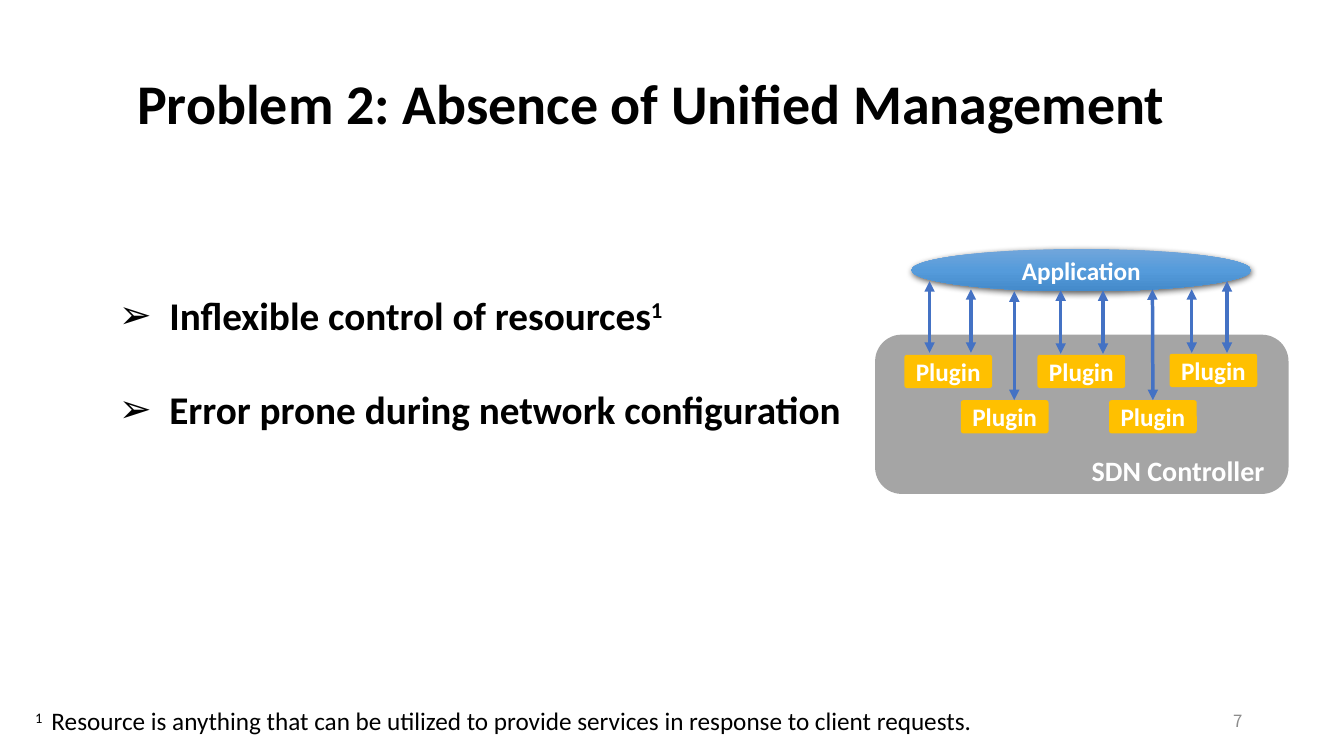
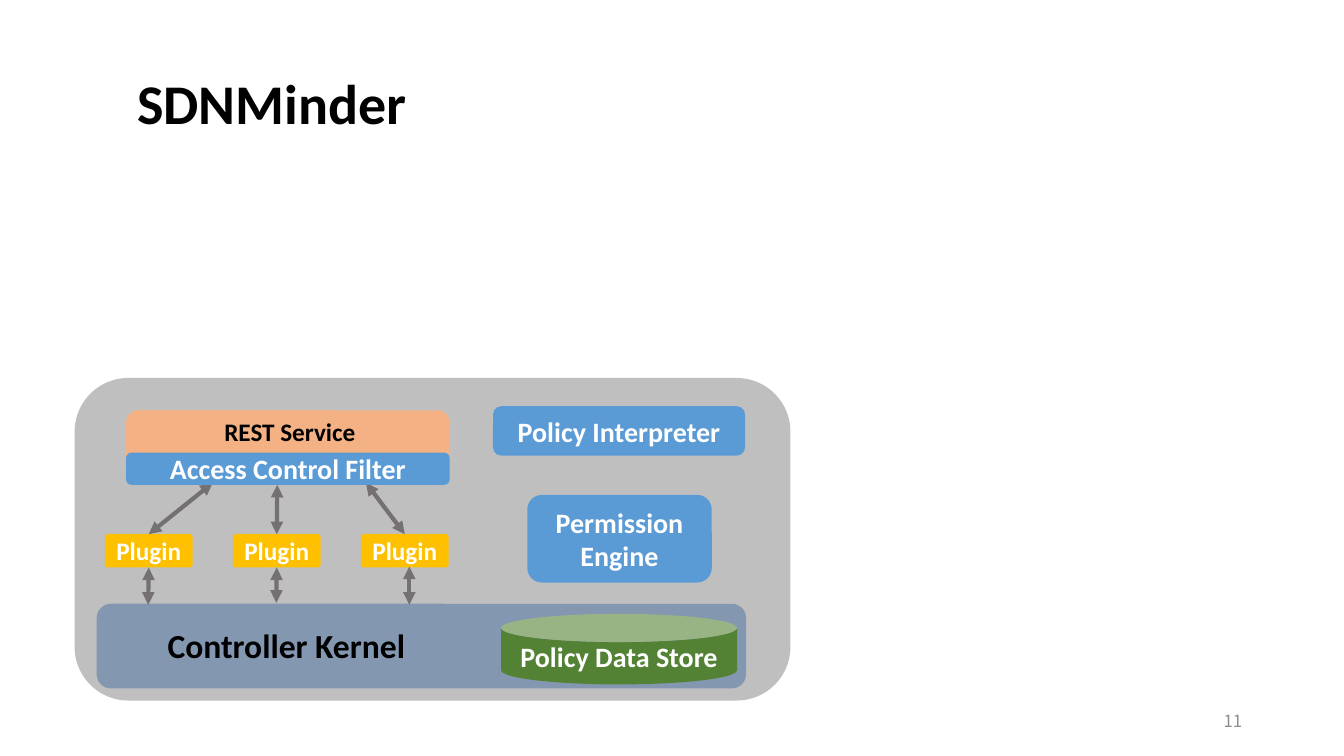
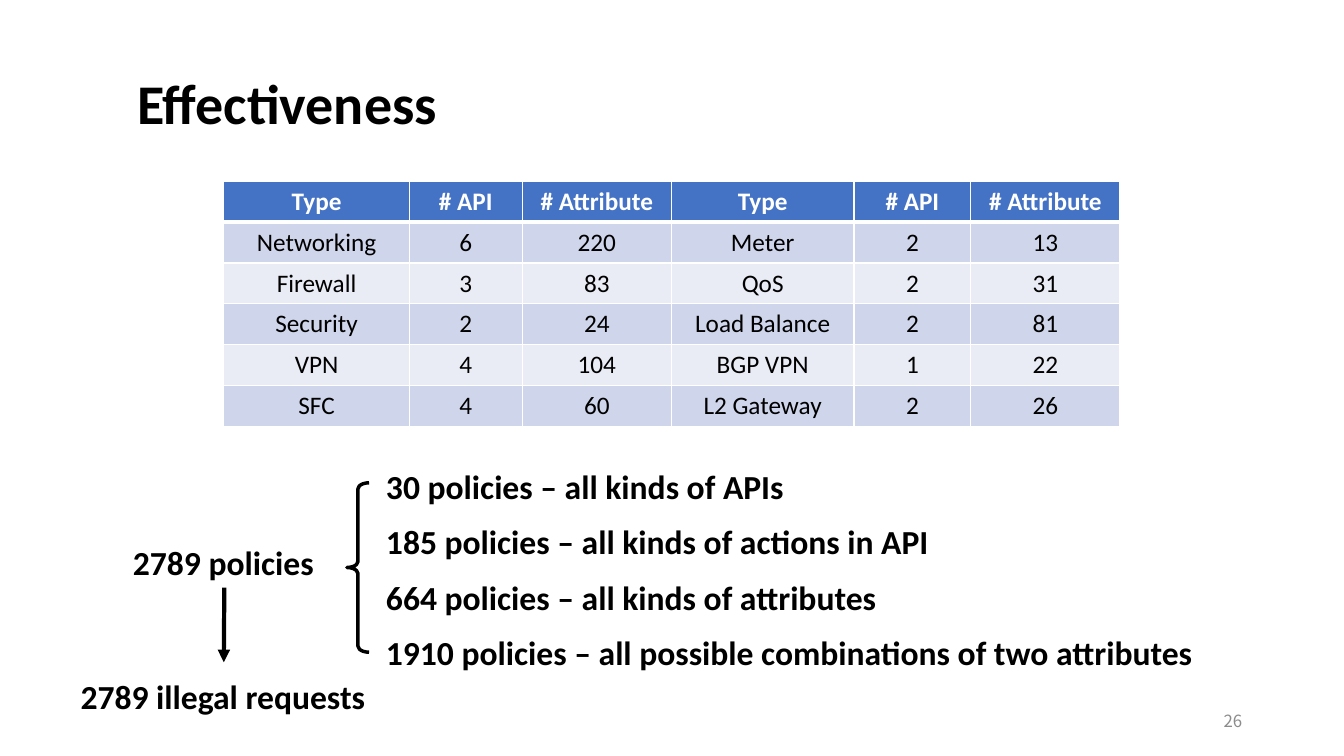
import copy
import pptx
import pptx.util
import pptx.dml.color
import pptx.enum.shapes
import pptx.enum.text
import pptx.oxml.ns
from lxml import etree

Inches = pptx.util.Inches
Pt = pptx.util.Pt
qn = pptx.oxml.ns.qn
KIND = pptx.enum.shapes.MSO_SHAPE
ALIGN = pptx.enum.text.PP_ALIGN
ANCHOR = pptx.enum.text.MSO_ANCHOR

# Shared style
FACE = "Calibri"
BLACK, WHITE = "000000", "FFFFFF"
BLUE, SKY, GOLD, GRAY = "4472C4", "5B9BD5", "FFC000", "767171"
PLUG_W, PLUG_H = 0.87, 0.33


def color(code):
    return pptx.dml.color.RGBColor.from_string(code)


def child(node, tag, **attrs):
    return etree.SubElement(node, qn(tag), attrs)


# Text
def style(par, size, ink=BLACK, bold=True, align=ALIGN.LEFT, face=FACE):
    par.alignment = align
    par.font.size = Pt(size)
    par.font.name = face
    par.font.bold = bold
    par.font.color.rgb = color(ink)


def raise_text(par, text):
    run = par.add_run()
    run.text = text
    run.font.bold = par.font.bold
    run._r.get_or_add_rPr().set("baseline", "30000")


def place(shape, box):
    shape.left, shape.top, shape.width, shape.height = map(Inches, box)


def label(host, box, text, size, wrap=False, anchor=ANCHOR.TOP, **look):
    shape = host.add_textbox(*map(Inches, box))
    frame = shape.text_frame
    frame.word_wrap = wrap
    frame.vertical_anchor = anchor
    par = frame.paragraphs[0]
    par.text = text
    style(par, size, **look)
    return shape


# Shapes and lines
def block(host, box, fill=None, text="", size=20, kind=KIND.ROUNDED_RECTANGLE, adj=None):
    shape = host.add_shape(kind, *map(Inches, box))
    shape.shadow.inherit = False
    shape.line.fill.background()
    if fill:
        shape.fill.solid()
        shape.fill.fore_color.rgb = color(fill)
    else:
        shape.fill.background()
    if adj is not None:
        shape.adjustments[0] = adj
    if text:
        frame = shape.text_frame
        frame.word_wrap = True
        frame.vertical_anchor = ANCHOR.MIDDLE
        frame.margin_left = frame.margin_right = 0
        frame.margin_top = frame.margin_bottom = 0
        frame.text = text
        style(frame.paragraphs[0], size, WHITE, align=ALIGN.CENTER)
    return shape


def plugin(host, left, top):
    return block(host, (left, top, PLUG_W, PLUG_H), GOLD, "Plugin", 18, adj=0.08)


def arrow(host, start, end, ink, width, both=True):
    line = host.add_connector(pptx.enum.shapes.MSO_CONNECTOR.STRAIGHT,
                              *map(Inches, start + end))
    line.line.color.rgb = color(ink)
    line.line.width = Pt(width)
    props = line._element.spPr
    edge = props.find(qn("a:ln"))
    if both:
        child(edge, "a:headEnd", type="triangle")
    child(edge, "a:tailEnd", type="triangle")
    child(props, "a:effectLst")
    return line


def shade(shape, stops):
    """Fill from top to bottom and add a soft shadow below."""
    shape.fill.gradient()
    shape.fill.gradient_angle = 270
    props = shape._element.spPr
    first = props.find(".//" + qn("a:gs"))
    first.addnext(copy.deepcopy(first))
    for stop, (spot, code) in zip(shape.fill.gradient_stops, stops):
        stop.position = spot
        stop.color.rgb = color(code)
    cast = child(props.find(qn("a:effectLst")), "a:outerShdw", blurRad=str(Pt(4.5)),
                 dist=str(Pt(1.5)), dir="5400000", algn="ctr", rotWithShape="0")
    child(child(cast, "a:srgbClr", val=BLACK), "a:alpha", val="63000")


# Slide frame: title and number
def start(deck, layout, title, width, number):
    slide = deck.slides.add_slide(deck.slide_layouts[layout])
    head = slide.shapes.title
    place(head, (1.26, 0.63, width, 0.77))
    frame = head.text_frame
    frame.text = title
    frame.word_wrap = False
    frame.auto_size = pptx.enum.text.MSO_AUTO_SIZE.NONE
    frame.vertical_anchor = ANCHOR.TOP
    style(frame.paragraphs[0], 40)
    label(slide.shapes, (9.42, 6.95, 3, 0.4), number, 12, True, ANCHOR.MIDDLE,
          ink="8C8C8C", bold=False, align=ALIGN.RIGHT, face="Noto Sans CJK SC")
    return slide


def bullets(shape, items):
    frame = shape.text_frame
    frame.auto_size = pptx.enum.text.MSO_AUTO_SIZE.NONE
    for i, (text, mark) in enumerate(items):
        par = frame.add_paragraph() if i else frame.paragraphs[0]
        par.text = text
        par.line_spacing = 2.0
        par.space_before = Pt(0)
        props = par._p.get_or_add_pPr()
        props.set("marL", str(Inches(0.5)))
        props.set("indent", str(Inches(-0.5)))
        child(props, "a:buChar", char="➢")
        style(par, 28)
        if mark:
            raise_text(par, mark)


def problem(deck):
    slide = start(deck, 1, "Problem 2: Absence of Unified Management", 10.51, "7")
    host = slide.shapes
    body = slide.placeholders[1]
    place(body, (1.08, 2.37, 7.65, 1.85))
    bullets(body, [("Inflexible control of resources", "1"),
                   ("Error prone during network configuration", "")])

    # Application above the controller
    block(host, (8.68, 3.32, 4.1, 1.58), "A5A5A5")
    app = block(host, (9.04, 2.47, 3.37, 0.42), SKY, "Application", 18, KIND.OVAL)
    shade(app, [(0, "71A6DB"), (0.5, "559BDB"), (1, "448ACA")])
    label(host, (10.72, 4.45, 1.93, 0.44), "SDN Controller", 20,
          ink=WHITE, align=ALIGN.CENTER)
    for left, top in [(8.97, 3.52), (10.29, 3.52), (11.6, 3.51), (9.53, 3.97)]:
        plugin(host, left, top)
    low = plugin(host, 11, 3.97)
    for x, top, end in [(9.22, 2.79, 3.5), (9.63, 2.87, 3.5), (10.06, 2.89, 3.97),
                        (10.52, 2.88, 3.51), (10.94, 2.88, 3.51),
                        (11.82, 2.87, 3.5), (12.17, 2.79, 3.5)]:
        arrow(host, (x, top), (x, end), BLUE, 2.5)
    arrow(host, (11.43, 2.87), (11.43, 3.97), BLUE, 2.5).end_connect(low, 0)

    # Footnote
    note = label(host, (0.25, 6.95, 9.97, 0.4), "", 18, True, bold=False)
    par = note.text_frame.paragraphs[0]
    raise_text(par, "1 ")
    par.add_run().text = " Resource is anything that can be utilized to provide services in response to client requests."


def keeper(deck):
    slide = start(deck, 5, "SDNMinder", 3.23, "11")

    # Controller
    group = slide.shapes.add_group_shape().shapes
    block(group, (0.74, 3.75, 7.1, 3.2), "BFBFBF")
    block(group, (0.96, 5.99, 6.44, 0.84), "8497B0")
    block(group, (4.97, 6.09, 2.34, 0.7), "548235", "Policy Data Store",
          kind=KIND.CAN, adj=0.4)
    plugs = [plugin(group, 1.04 + 1.27 * i, 5.3) for i in range(3)]
    block(group, (1.25, 4.07, 3.21, 0.72), "F4B183")
    tops = [((2.11, 4.79), (1.47, 5.3)), ((2.75, 4.81), (2.75, 5.3)),
            ((3.63, 4.79), (4.02, 5.3))]
    for plug, (begin, end) in zip(plugs, tops):
        arrow(group, begin, end, GRAY, 3).end_connect(plug, 0)
    for plug, x, end in [(plugs[0], 1.47, 6), (plugs[1], 2.74, 5.98)]:
        arrow(group, (x, 5.63), (x, end), GRAY, 3).begin_connect(plug, 2)
    arrow(group, (4.06, 5.62), (4.06, 6), GRAY, 3)
    label(group, (2.12, 4.08, 1.51, 0.4), "REST Service", 18, align=ALIGN.CENTER)
    label(group, (1.55, 6.15, 2.58, 0.5), "Controller Kernel", 24, align=ALIGN.CENTER)

    # Added parts
    for box, text in [((4.89, 4.03, 2.5, 0.49), "Policy Interpreter"),
                      ((5.23, 4.91, 1.83, 0.87), "Permission Engine"),
                      ((1.25, 4.49, 3.21, 0.32), "Access Control Filter")]:
        block(slide.shapes, box, SKY, text)


def grid(host, left, top, widths, height, rows):
    table = host.add_table(len(rows), len(widths), Inches(left), Inches(top),
                           Inches(sum(widths)), Inches(height)).table
    for col, width in zip(table.columns, widths):
        col.width = Inches(width)
    for r, row in enumerate(rows):
        back = BLUE if r == 0 else ("E9EBF5", "CFD5EA")[r % 2]
        for c, text in enumerate(row):
            cell = table.cell(r, c)
            if r == 0:
                edge = child(cell._tc.get_or_add_tcPr(), "a:lnB", w=str(Pt(3)))
                child(child(edge, "a:solidFill"), "a:srgbClr", val=WHITE)
            cell.fill.solid()
            cell.fill.fore_color.rgb = color(back)
            cell.text = text
            style(cell.text_frame.paragraphs[0], 18, BLACK if r else WHITE,
                  r == 0, ALIGN.CENTER)


def effect(deck):
    host = start(deck, 5, "Effectiveness", 3.23, "26").shapes
    grid(host, 2.22, 1.8, [1.84, 1.12, 1.48, 1.81, 1.16, 1.48], 2.43, [
        ["Type", "# API", "# Attribute"] * 2,
        ["Networking", "6", "220", "Meter", "2", "13"],
        ["Firewall", "3", "83", "QoS", "2", "31"],
        ["Security", "2", "24", "Load Balance", "2", "81"],
        ["VPN", "4", "104", "BGP VPN", "1", "22"],
        ["SFC", "4", "60", "L2 Gateway", "2", "26"],
    ])

    # Policies and their kinds
    total = label(host, (1.22, 5.33, 2.01, 0.5), "2789 policies", 24)
    brace = block(host, (3.44, 4.79, 0.22, 1.68), kind=KIND.LEFT_BRACE, adj=0.27)
    brace.line.color.rgb = color(BLACK)
    brace.line.width = Pt(2.5)
    kinds = [(4.18, False, "30 policies – all kinds of APIs"),
             (5.95, True, "185 policies – all kinds of actions in API"),
             (5.12, False, "664 policies – all kinds of attributes"),
             (8.43, True, "1910 policies – all possible combinations of two attributes")]
    for i, (width, wrap, text) in enumerate(kinds):
        label(host, (3.73, 4.57 + 0.55 * i, width, 0.5), text, 24, wrap)
    arrow(host, (2.22, 5.83), (2.22, 6.57), BLACK, 3, False).begin_connect(total, 2)
    label(host, (0.7, 6.66, 3.05, 0.5), "2789 illegal requests", 24)


def main():
    deck = pptx.Presentation()
    deck.slide_width, deck.slide_height = Inches(13.33), Inches(7.5)
    problem(deck)
    keeper(deck)
    effect(deck)
    deck.save("out.pptx")


if __name__ == "__main__":
    main()
